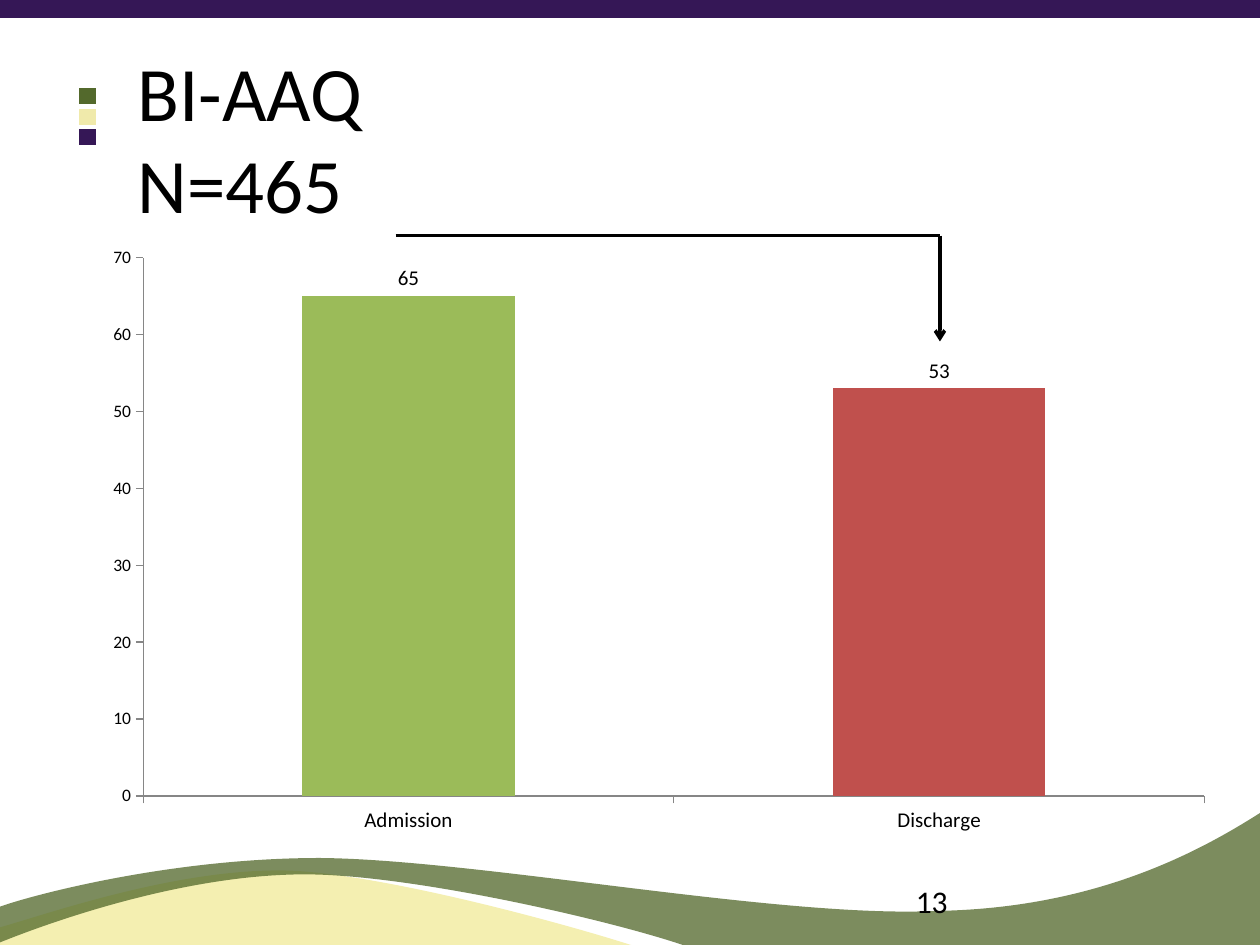
from lxml.etree import SubElement
from pptx import Presentation
from pptx.chart.data import CategoryChartData
from pptx.dml.color import RGBColor
from pptx.enum.chart import XL_CHART_TYPE, XL_LABEL_POSITION, XL_TICK_MARK
from pptx.enum.shapes import MSO_CONNECTOR
from pptx.enum.text import MSO_ANCHOR, MSO_AUTO_SIZE, PP_ALIGN
from pptx.oxml.ns import qn
from pptx.util import Inches, Pt

BLACK, PLUM, OLIVE, CREAM = "000000", "351756", "53692C", "F0EAAB"
GREY = "868686"
UNITS = 100
FRAME = {
    "word_wrap": True,
    "auto_size": MSO_AUTO_SIZE.NONE,
    "margin_left": Inches(0.1),
    "margin_top": Inches(0.05),
}


def color(code):
    return RGBColor.from_string(code)


def style(item, values):
    for name, value in values.items():
        setattr(item, name, value)


def set_font(font, size):
    style(font, {"name": "Calibri", "size": Pt(size), "bold": False})
    font.color.rgb = color(BLACK)


def place(shape, *box):
    names = ("left", "top", "width", "height")
    style(shape, dict(zip(names, map(Inches, box))))


def write(shape, text, size, anchor):
    frame = shape.text_frame
    style(frame, {**FRAME, "vertical_anchor": anchor})
    line = frame.paragraphs[0]
    line.text = text
    line.alignment = PP_ALIGN.LEFT
    set_font(line.font, size)


def add_line(slide, start, end, code, width, cap="flat", arrow=False):
    ends = map(Inches, (*start, *end))
    line = slide.shapes.add_connector(MSO_CONNECTOR.STRAIGHT, *ends)
    line.line.color.rgb = color(code)
    line.line.width = Pt(width)
    edge = line.line._get_or_add_ln()
    edge.set("cap", cap)
    if arrow:
        SubElement(edge, qn("a:tailEnd"), type="arrow")
    SubElement(line._element.spPr, qn("a:effectLst"))


def bend_edges(wave, parts):
    edges = iter(list(wave._element.spPr.iter(qn("a:lnTo"))))
    for part in parts:
        first, *rest = [next(edges) for _ in part]
        if rest:
            curve = first.makeelement(qn("a:cubicBezTo"))
            first.addprevious(curve)
            for edge in (first, *rest):
                curve.append(edge[0])
                edge.getparent().remove(edge)


def add_wave(slide, start, parts, code, alpha=None):
    dots = [start, *(dot for part in parts for dot in part)]
    first, *rest = [(x * UNITS, y * UNITS) for x, y in dots]
    form = slide.shapes.build_freeform(*first, scale=Inches(1) / UNITS)
    form.add_line_segments(rest, close=True)
    wave = form.convert_to_shape()
    bend_edges(wave, parts)
    wave.shadow.inherit = False
    wave.fill.solid()
    wave.fill.fore_color.rgb = color(code)
    wave.line.fill.background()
    if alpha:
        tint = wave._element.spPr.find(".//" + qn("a:srgbClr"))
        SubElement(tint, qn("a:alpha"), val=str(alpha * 1000))


def set_axis(axis, size):
    style(axis, {
        "has_major_gridlines": False,
        "major_tick_mark": XL_TICK_MARK.OUTSIDE,
        "minor_tick_mark": XL_TICK_MARK.NONE,
    })
    axis.format.line.color.rgb = color(GREY)
    set_font(axis.tick_labels.font, size)


def add_bars(slide):
    data = CategoryChartData()
    data.categories = ["Admission", "Discharge"]
    data.add_series("Series 1", (65, 53))
    box = map(Inches, (0.72, 1.87, 9.02, 4.84))
    chart = slide.shapes.add_chart(XL_CHART_TYPE.COLUMN_CLUSTERED, *box, data).chart
    style(chart, {"has_legend": False, "has_title": False})
    set_font(chart.font, 10)
    set_axis(chart.category_axis, 12)
    set_axis(chart.value_axis, 10)
    style(chart.value_axis, {"minimum_scale": 0, "maximum_scale": 70, "major_unit": 10})
    plot = chart.plots[0]
    style(plot, {"gap_width": 150, "vary_by_categories": False, "has_data_labels": True})
    style(plot.data_labels, {"show_value": True, "position": XL_LABEL_POSITION.OUTSIDE_END})
    set_font(plot.data_labels.font, 12)
    bars = plot.series[0]
    bars.format.fill.solid()
    bars.format.fill.fore_color.rgb = color("4F81BD")
    for index, code in enumerate(("9BBB59", "C0504D")):
        fill = bars.points[index].format.fill
        fill.solid()
        fill.fore_color.rgb = color(code)


def add_decor(slide):
    add_wave(slide, (5.21, 7.57), [
        ((4.91, 7.45), (3.18, 6.95), (2.31, 6.91)),
        ((1.44, 6.88), (0.39, 7.25), (0, 7.36)),
        [(0, 7.57)],
    ], "F4EFB1")
    add_line(slide, (0.05, 0.07), (9.95, 0.07), PLUM, 10.5, "sq")
    for y, code in ((0.93, CREAM), (1.09, PLUM), (0.76, OLIVE)):
        add_line(slide, (0.69, y), (0.7, y), code, 9, "sq")
    add_wave(slide, (10.01, 7.57), [
        [(5.6, 7.57)],
        ((5.25, 7.4), (3.37, 6.94), (2.42, 6.94)),
        ((1.47, 6.94), (0.42, 7.31), (0, 7.48)),
        [(-0.01, 7.2)],
        ((0.17, 7.13), (1.3, 6.81), (2.54, 6.81)),
        ((3.79, 6.82), (6.19, 7.29), (7.43, 7.23)),
        ((8.72, 7.21), (9.55, 6.74), (10.02, 6.44)),
    ], OLIVE, 76)


def main():
    deck = Presentation()
    style(deck, {"slide_width": Inches(10), "slide_height": Inches(7.5)})
    slide = deck.slides.add_slide(deck.slide_layouts[5])
    add_decor(slide)
    title = slide.shapes.title
    place(title, 0.99, 0.3, 8.51, 1.25)
    write(title, "BI-AAQ\vN=465", 44, MSO_ANCHOR.TOP)
    page = slide.shapes.add_textbox(*map(Inches, (7.17, 6.95, 2.33, 0.4)))
    write(page, "13", 18, MSO_ANCHOR.MIDDLE)
    add_bars(slide)
    bend = (7.46, 1.87)
    add_line(slide, (3.14, 1.87), bend, BLACK, 2)
    add_line(slide, bend, (7.46, 2.71), BLACK, 2, arrow=True)
    deck.save("out.pptx")


if __name__ == "__main__":
    main()
